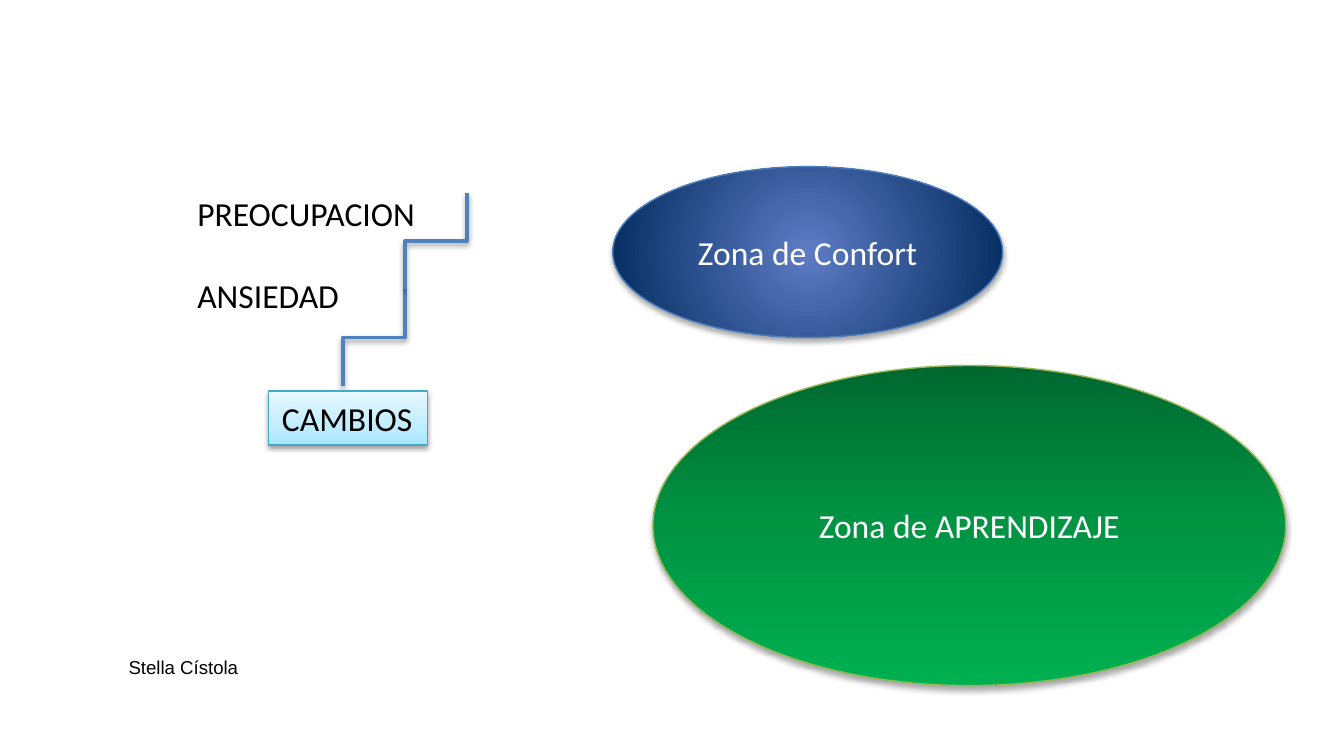
"""Build the comfort zone and learning zone slide."""
from lxml import etree
from pptx import Presentation
from pptx import util as u
from pptx.dml.color import RGBColor
from pptx.enum import shapes, text
from pptx.oxml.ns import qn

THEME = {
    "dark": "000000", "light": "FFFFFF", "step": "4F81BD",
    "sky": [(0, "A7E6FF"), (35, "C1EDFF"), (100, "E7F8FF")], "sky_line": "46AAC5",
    "navy": [(0, "5E7CC5"), (100, "00295C")], "navy_line": "4B7EBC",
    "green": [(0, "00682F"), (50, "009443"), (100, "00B050")], "green_line": "98B955",
    "body": {"name": "Calibri", "size": u.Pt(18)},
    "credit": {"name": "Arial", "size": u.Pt(10)},
    "outline": u.Pt(0.75), "step_width": u.Pt(2),
}
LABELS = [
    ("ANSIEDAD", (3.48, 5.08, 3.23, 1.02), "body"),
    ("PREOCUPACION", (3.48, 3.53, 4.65, 1.02), "body"),
    ("Stella Cístola", (2.18, 12.27, 2.59, 0.68), "credit"),
]
PANELS = [
    {"label": "CAMBIOS", "at": (5.08, 7.39, 3, 1.02), "kind": "RECTANGLE", "fill": "sky",
     "angle": 270, "ink": "dark", "align": "LEFT", "wrap": False, "shade": (38, 1.6)},
    {"label": "Zona de Confort", "at": (11.58, 3.15, 7.37, 3.23), "kind": "OVAL", "fill": "navy",
     "angle": None, "ink": "light", "align": "CENTER", "wrap": True, "shade": (35, 1.8)},
    {"label": "Zona de APRENDIZAJE", "at": (12.34, 6.91, 11.96, 6.05), "kind": "OVAL", "fill": "green",
     "angle": 90, "ink": "light", "align": "CENTER", "wrap": True, "shade": (35, 1.8)},
]
STAIR = {"start": (6.48, 7.29), "run": 1.17, "rise": 1.82, "steps": 2}


def add_child(parent, tag, **values):
    child = etree.SubElement(parent, qn(tag))
    for name, value in values.items():
        child.set(name, str(value))
    return child


def add_shadow(shape, alpha, distance):
    properties = shape._element.spPr
    effects = properties.find(qn("a:effectLst"))
    if effects is None:
        effects = add_child(properties, "a:effectLst")
    shadow = add_child(effects, "a:outerShdw", blurRad=u.Pt(3.1), dist=u.Pt(distance),
                       dir=5400000, rotWithShape=0)
    color = add_child(shadow, "a:srgbClr", val=THEME["dark"])
    add_child(color, "a:alpha", val=alpha * 1000)


def add_gradient(shape, stops, angle):
    properties = shape._element.spPr
    gradient = add_child(properties, "a:gradFill", rotWithShape=1)
    stop_list = add_child(gradient, "a:gsLst")
    for position, color in stops:
        add_child(add_child(stop_list, "a:gs", pos=position * 1000), "a:srgbClr", val=color)
    if angle is None:
        center = add_child(gradient, "a:path", path="circle")
        add_child(center, "a:fillToRect", l=50000, t=50000, r=50000, b=50000)
    else:
        add_child(gradient, "a:lin", ang=angle * 60000, scaled=0)
    properties.find(qn("a:prstGeom")).addnext(gradient)


def set_line(shape, color, width):
    shape.line.color.rgb = RGBColor.from_string(color)
    shape.line.width = width


def write(shape, words, style, ink="dark", align="LEFT", wrap=False, anchor="TOP"):
    frame = shape.text_frame
    frame.word_wrap = wrap
    frame.vertical_anchor = getattr(text.MSO_ANCHOR, anchor)
    para = frame.paragraphs[0]
    para.alignment = getattr(text.PP_ALIGN, align)
    span = para.add_run()
    span.text = words
    for name, value in THEME[style].items():
        setattr(span.font, name, value)
    span.font.color.rgb = RGBColor.from_string(THEME[ink])


def add_stair(page):
    x, y = STAIR["start"]
    run, rise = STAIR["run"], STAIR["rise"]
    for step in range(STAIR["steps"]):
        middle_x, middle_y = x + (step + 0.5) * run, y - (step + 0.5) * rise
        ends = (middle_x + rise / 2, middle_y + run / 2, middle_x - rise / 2, middle_y - run / 2)
        line = page.shapes.add_connector(shapes.MSO_CONNECTOR.ELBOW, *map(u.Cm, ends))
        line._element.spPr.find(qn("a:xfrm")).set("rot", "5400000")
        set_line(line, THEME["step"], THEME["step_width"])
        add_shadow(line, 38, 1.6)


def add_panel(page, panel):
    kind = getattr(shapes.MSO_SHAPE, panel["kind"])
    shape = page.shapes.add_shape(kind, *map(u.Cm, panel["at"]))
    add_gradient(shape, THEME[panel["fill"]], panel["angle"])
    set_line(shape, THEME[panel["fill"] + "_line"], THEME["outline"])
    shape.shadow.inherit = False
    add_shadow(shape, *panel["shade"])
    write(shape, panel["label"], "body", panel["ink"], panel["align"], panel["wrap"], "MIDDLE")


def main():
    deck = Presentation()
    deck.slide_width, deck.slide_height = u.Cm(25.4), u.Cm(14.29)
    page = deck.slides.add_slide(deck.slide_layouts[6])
    add_stair(page)
    for panel in PANELS:
        add_panel(page, panel)
    for words, at, style in LABELS:
        write(page.shapes.add_textbox(*map(u.Cm, at)), words, style)
    deck.save("out.pptx")


if __name__ == "__main__":
    main()
